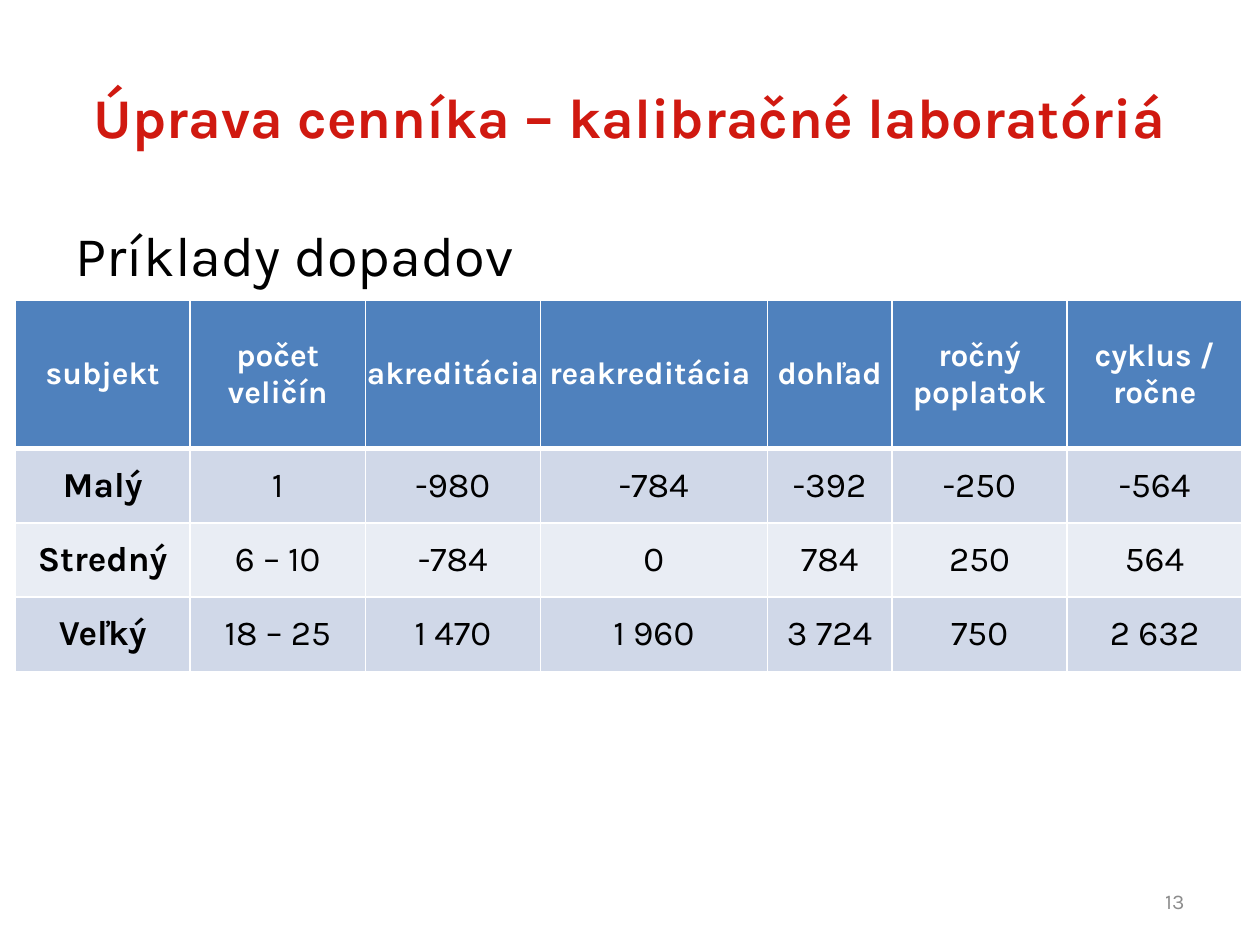
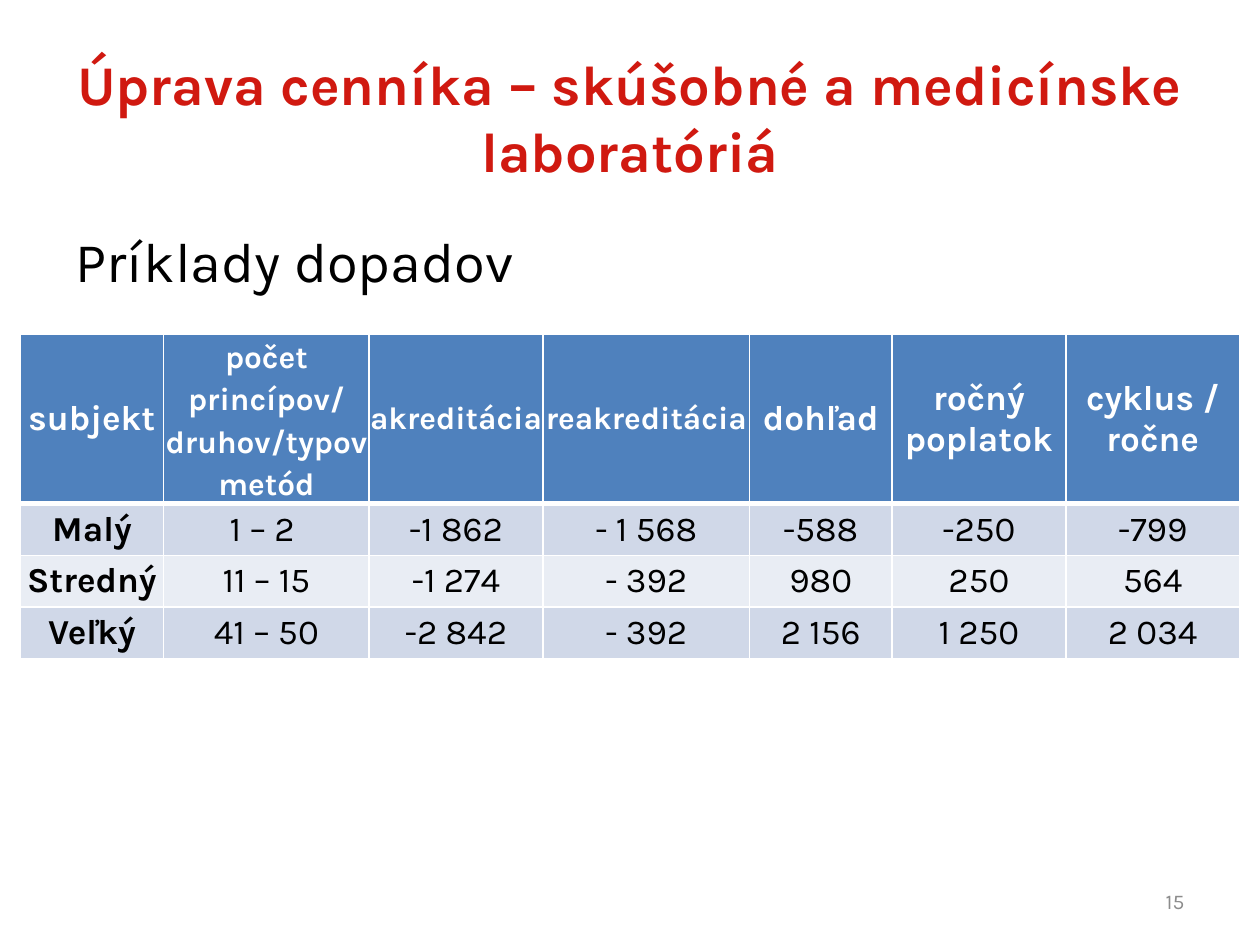
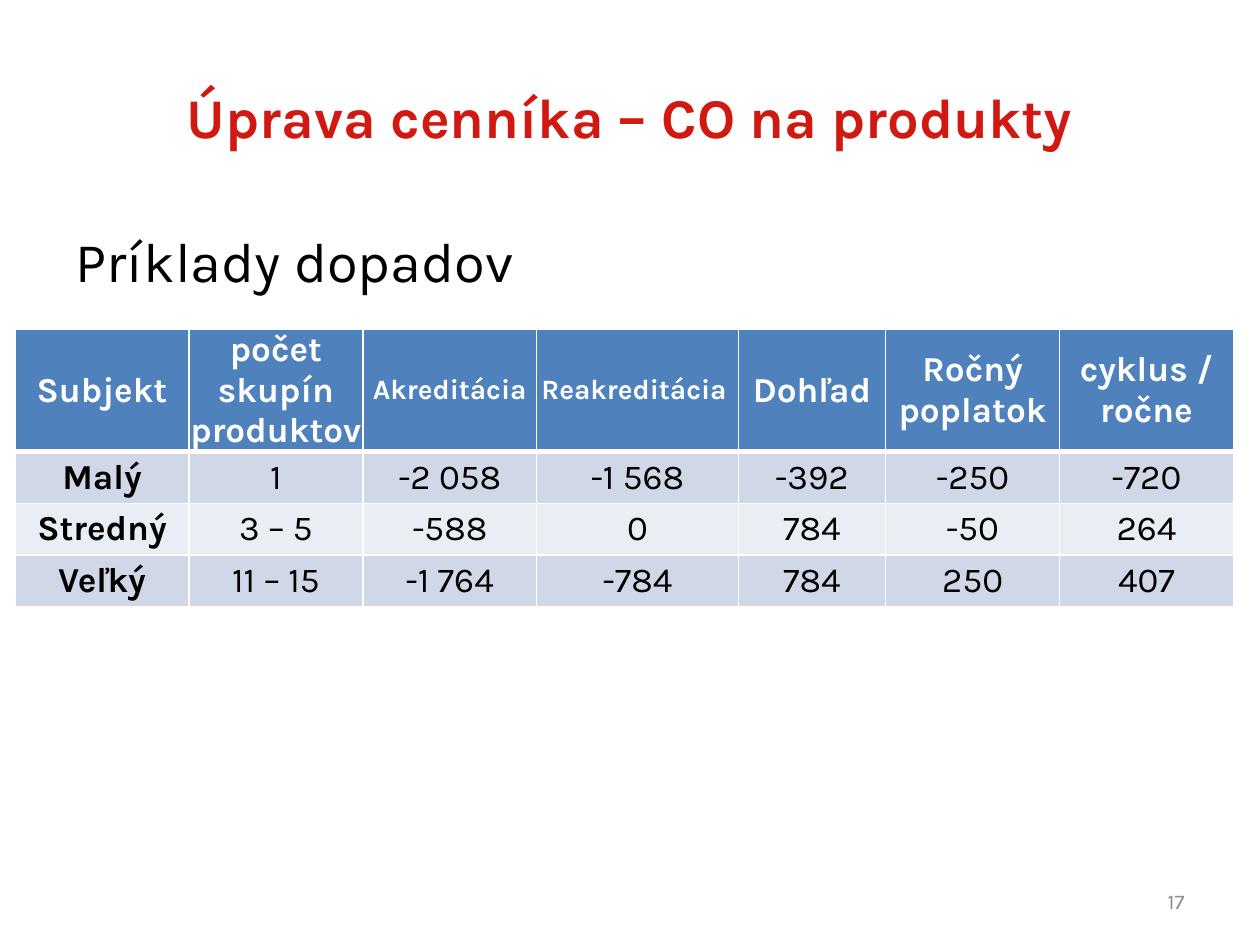
from lxml import etree
from pptx import Presentation, util as u
from pptx.dml.color import RGBColor
from pptx.enum import text
from pptx.oxml import ns

PX = 9144
FONT = "Karla"
COLORS = {
    "title": "D01910",
    "body": "000000",
    "number": "8C8C8C",
    "header": "4F81BD",
    "header_text": "FFFFFF",
    "band_dark": "D0D8E8",
    "band_light": "E9EDF4",
    "border": "FFFFFF",
}
LEFT, CENTER, RIGHT = text.PP_ALIGN.LEFT, text.PP_ALIGN.CENTER, text.PP_ALIGN.RIGHT

PRICE_CHANGES = [
    {
        "title": "Úprava cenníka – kalibračné laboratóriá",
        "number": "13",
        "subtitle_top": 170,
        "origin": (12, 238),
        "columns": [139, 139, 139, 180, 99, 139, 139],
        "heights": [118, 59, 59, 59],
        "header": ["subjekt", "počet veličín", "akreditácia", "reakreditácia ",
                   "dohľad", "ročný poplatok", "cyklus / ročne"],
        "header_sizes": [18] * 7,
        "impacts": [
            ["Malý", "1", "-980", "-784", "-392", "-250", "-564"],
            ["Stredný", "6 – 10", "-784", "0", "784", "250", "564"],
            ["Veľký", "18 – 25", "1 470", "1 960", "3 724", "750", "2 632"],
        ],
    },
    {
        "title": "Úprava cenníka – skúšobné a medicínske laboratóriá",
        "number": "15",
        "subtitle_top": 175,
        "origin": (16, 265),
        "columns": [114, 163, 138, 164, 113, 138, 138],
        "heights": [134, 41, 41, 41],
        "header": ["subjekt", "počet princípov/\ndruhov/typov metód", "akreditácia",
                   "reakreditácia ", "dohľad", "ročný poplatok", "cyklus / ročne"],
        "header_sizes": [20, 18, 18, 18, 20, 20, 20],
        "impacts": [
            ["Malý", "1 – 2 ", "-1 862", "- 1 568", "-588", "-250", "-799"],
            ["Stredný", "11 – 15", "-1 274", "- 392", "980", "250", "564"],
            ["Veľký", "41 – 50", "-2 842", "- 392", "2 156", "1 250", "2 034"],
        ],
    },
    {
        "title": "Úprava cenníka – CO na produkty",
        "number": "17",
        "subtitle_top": 175,
        "origin": (12, 261),
        "columns": [138, 138, 138, 160, 117, 138, 138],
        "heights": [97, 41, 41, 41],
        "header": ["Subjekt", "počet skupín produktov", "Akreditácia", "Reakreditácia ",
                   "Dohľad", "Ročný poplatok", "cyklus / ročne"],
        "header_sizes": [20, 20, 16, 16, 20, 20, 20],
        "impacts": [
            ["Malý", "1", "-2 058", "-1 568", "-392", "-250", "-720"],
            ["Stredný", "3 – 5", "-588", "0", "784", "-50", "264"],
            ["Veľký", "11 – 15", "-1 764", "-784", "784", "250", "407"],
        ],
    },
]


class Deck:
    def __init__(self):
        self.prs = Presentation()
        self.prs.slide_width, self.prs.slide_height = 1000 * PX, 750 * PX
        self.slide = None

    def new_slide(self):
        self.slide = self.prs.slides.add_slide(self.prs.slide_layouts[1])

    def add_text(self, frame, content, size, color, align, bold=False, spacing=None):
        for index, line in enumerate(content.split("\n")):
            paragraph = frame.add_paragraph() if index else frame.paragraphs[0]
            paragraph.alignment = align
            paragraph.space_before = u.Pt(0)
            if spacing:
                paragraph.line_spacing = spacing
            run = paragraph.add_run()
            run.text = line
            run.font.name, run.font.size, run.font.bold = FONT, u.Pt(size), bold
            run.font.color.rgb = RGBColor.from_string(COLORS[color])

    def place(self, shape, left, top, width, height, anchor):
        shape.left, shape.top = left * PX, top * PX
        shape.width, shape.height = width * PX, height * PX
        frame = shape.text_frame
        frame.word_wrap = True
        frame.auto_size = text.MSO_AUTO_SIZE.NONE
        frame.vertical_anchor = anchor
        return frame

    def title(self, content):
        frame = self.place(self.slide.shapes.title, 50, 30, 900, 125, text.MSO_ANCHOR.MIDDLE)
        self.add_text(frame, content, 32, "title", CENTER, bold=True)

    def subtitle(self, content, top):
        frame = self.place(self.slide.placeholders[1], 50, top, 900, 495, text.MSO_ANCHOR.TOP)
        properties = frame.paragraphs[0]._p.get_or_add_pPr()
        properties.set("marL", "0")
        properties.set("indent", "0")
        etree.SubElement(properties, ns.qn("a:buNone"))
        self.add_text(frame, content, 32, "body", LEFT)

    def page_number(self, content):
        box = self.slide.shapes.add_textbox(0, 0, PX, PX)
        frame = self.place(box, 717, 695, 233, 40, text.MSO_ANCHOR.MIDDLE)
        self.add_text(frame, content, 12, "number", RIGHT)

    def borders(self, cell, bottom):
        properties = cell._tc.get_or_add_tcPr()
        for index, (side, points) in enumerate(zip("LRTB", (1, 1, 1, bottom))):
            line = etree.Element(ns.qn(f"a:ln{side}"), w=str(u.Pt(points)))
            fill = etree.SubElement(line, ns.qn("a:solidFill"))
            etree.SubElement(fill, ns.qn("a:srgbClr"), val=COLORS["border"])
            properties.insert(index, line)

    def cell(self, cell, content, size, color, fill, bold, bottom=1):
        cell.margin_left = cell.margin_right = cell.margin_top = cell.margin_bottom = 0
        cell.vertical_anchor = text.MSO_ANCHOR.MIDDLE
        cell.fill.solid()
        cell.fill.fore_color.rgb = RGBColor.from_string(COLORS[fill])
        self.borders(cell, bottom)
        spacing = 1.15 if "\n" in content else None
        self.add_text(cell.text_frame, content, size, color, CENTER, bold, spacing)

    def impact_table(self, origin, columns, heights, header, header_sizes, impacts):
        left, top = origin
        table = self.slide.shapes.add_table(
            len(heights), len(columns), left * PX, top * PX,
            sum(columns) * PX, sum(heights) * PX).table
        for column, width in zip(table.columns, columns):
            column.width = width * PX
        for row, height in zip(table.rows, heights):
            row.height = height * PX
        for c, (label, size) in enumerate(zip(header, header_sizes)):
            self.cell(table.cell(0, c), label, size, "header_text", "header", True, bottom=3)
        for r, values in enumerate(impacts, 1):
            band = "band_dark" if r % 2 else "band_light"
            for c, value in enumerate(values):
                self.cell(table.cell(r, c), value, 20, "body", band, c == 0,
                          bottom=1)


def main():
    deck = Deck()
    for change in PRICE_CHANGES:
        deck.new_slide()
        deck.title(change["title"])
        deck.subtitle("Príklady dopadov", change["subtitle_top"])
        deck.page_number(change["number"])
        deck.impact_table(change["origin"], change["columns"], change["heights"],
                          change["header"], change["header_sizes"], change["impacts"])
    deck.prs.save("out.pptx")


if __name__ == "__main__":
    main()
